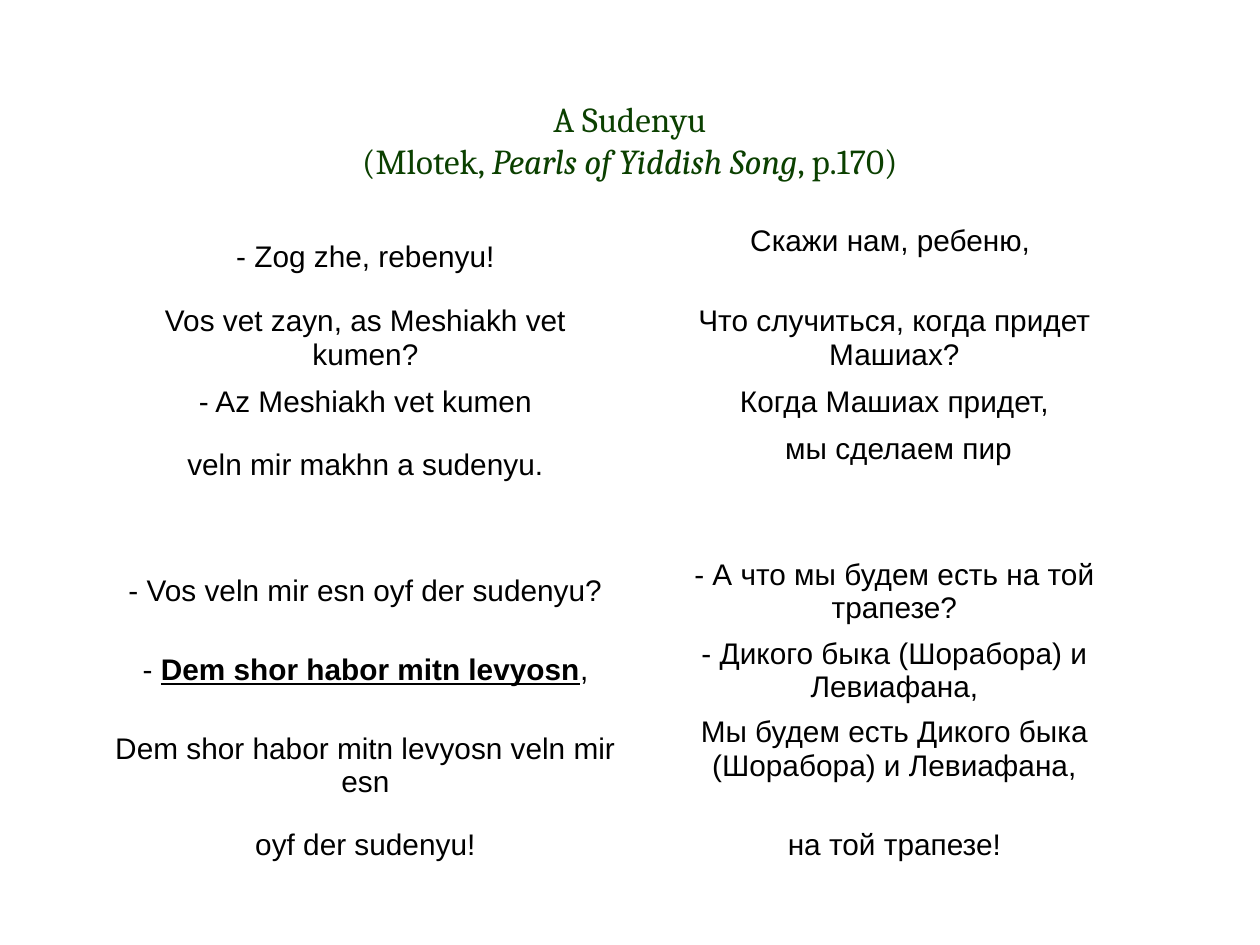
from dataclasses import dataclass

import pptx
import pptx.dml.color
import pptx.enum.text
import pptx.util

PX = 914400 / 126
COLORS = {"title": "0B4000", "text": "000000"}
ALIGN = pptx.enum.text.PP_ALIGN
ANCHOR = pptx.enum.text.MSO_ANCHOR


@dataclass
class Span:
    text: str
    bold: bool = False
    italic: bool = False
    underline: bool = False


@dataclass
class Verse:
    height: int
    yiddish: list[Span]
    russian: list[Span]
    russian_anchor: ANCHOR = ANCHOR.MIDDLE


def px(length: int) -> int:
    return round(length * PX)


def write(frame, spans: list[Span], *, font: str, size: float, color: str) -> None:
    """Fill a text frame with one centred paragraph of formatted spans."""
    para = frame.paragraphs[0]
    para.alignment = ALIGN.CENTER
    for part in spans:
        span = para.add_run()
        span.text = part.text
        span.font.name = font
        span.font.size = pptx.util.Pt(size)
        span.font.bold = part.bold
        span.font.italic = part.italic
        span.font.underline = part.underline
        span.font.color.rgb = pptx.dml.color.RGBColor.from_string(COLORS[color])


def add_title(page) -> None:
    box = page.shapes.title
    box.left, box.top, box.width, box.height = px(63), px(60), px(1134), px(158)
    frame = box.text_frame
    frame.vertical_anchor = ANCHOR.MIDDLE
    write(frame, [Span("A Sudenyu")], font="Cambria", size=20, color="title")
    frame.paragraphs[0].add_line_break()
    write(
        frame,
        [Span("(Mlotek, "), Span("Pearls of Yiddish Song", italic=True), Span(", p.170)")],
        font="Cambria", size=20, color="title",
    )


def add_verses(page, verses: list[Verse], left: int, top: int, column: int) -> None:
    height = sum(verse.height for verse in verses)
    table = page.shapes.add_table(
        len(verses), 2, px(left), px(top), px(2 * column), px(height)
    ).table
    table.first_row = table.horz_banding = False
    for table_column in table.columns:
        table_column.width = px(column)
    for row, verse in zip(table.rows, verses):
        row.height = px(verse.height)
        sides = [(verse.yiddish, ANCHOR.MIDDLE), (verse.russian, verse.russian_anchor)]
        for cell, (spans, anchor) in zip(row.cells, sides):
            cell.fill.background()
            cell.vertical_anchor = anchor
            cell.margin_left = cell.margin_right = px(11)
            cell.margin_top = cell.margin_bottom = px(6 if spans else 0)
            write(cell.text_frame, spans, font="Arial", size=17, color="text")


# Row heights: one line, two lines, a loose pair and three lines
ONE, TWO, LOOSE, THREE = 47, 79, 82, 112
VERSES = [
    Verse(TWO, [Span("- Zog zhe, rebenyu!")], [Span("Скажи нам, ребеню, ")], ANCHOR.TOP),
    Verse(LOOSE, [Span("Vos vet zayn, as Meshiakh vet kumen?")],
          [Span("Что случиться, когда придет Машиах?")]),
    Verse(ONE, [Span("- Az Meshiakh vet kumen")], [Span("Когда Машиах придет,")]),
    Verse(TWO, [Span("veln mir makhn a sudenyu.")], [Span(" мы сделаем пир")], ANCHOR.TOP),
    Verse(ONE, [], []),
    Verse(TWO, [Span("- Vos veln mir esn oyf der sudenyu?")],
          [Span("- А что мы будем есть на той трапезе?")]),
    Verse(TWO,
          [Span("- "), Span("Dem shor habor mitn levyosn", bold=True, underline=True), Span(",")],
          [Span("- Дикого быка (Шорабора) и Левиафана,")]),
    Verse(THREE, [Span("Dem shor habor mitn levyosn veln mir esn")],
          [Span("Мы будем есть Дикого быка (Шорабора) и Левиафана,")], ANCHOR.TOP),
    Verse(ONE, [Span("oyf der sudenyu!")], [Span("на той трапезе!")]),
]


def main() -> None:
    deck = pptx.Presentation()
    deck.slide_width, deck.slide_height = px(1260), px(945)
    page = deck.slides.add_slide(deck.slide_layouts[5])
    add_title(page)
    add_verses(page, VERSES, left=101, top=218, column=529)
    deck.save("out.pptx")


if __name__ == "__main__":
    main()
